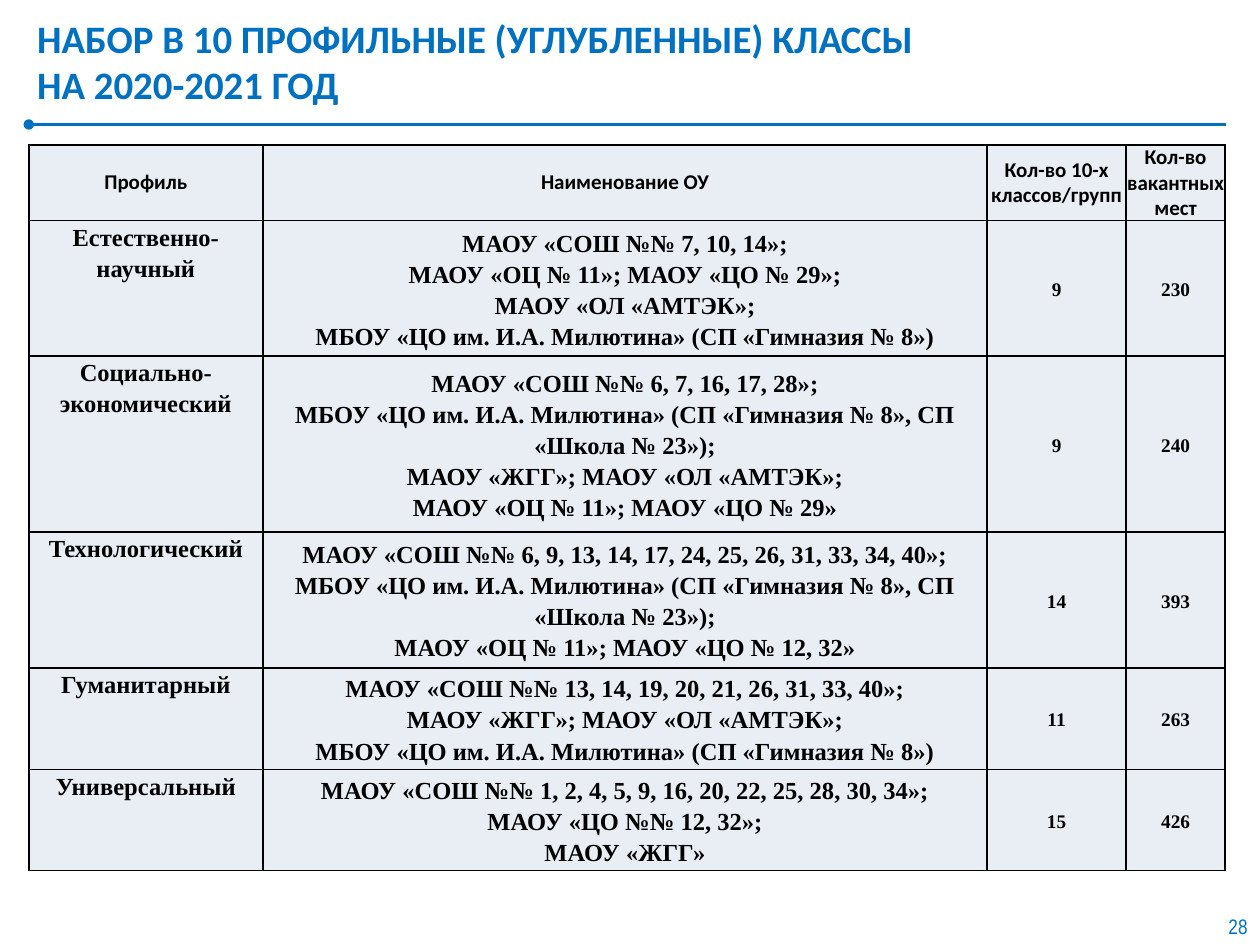
from dataclasses import dataclass

from lxml import etree
from pptx import Presentation
from pptx.dml.color import RGBColor
from pptx.enum.shapes import MSO_CONNECTOR
from pptx.enum.text import MSO_ANCHOR, PP_ALIGN
from pptx.oxml.ns import qn
from pptx.util import Cm, Pt

STRAIGHT = MSO_CONNECTOR.STRAIGHT
TOP, MIDDLE = MSO_ANCHOR.TOP, MSO_ANCHOR.MIDDLE
LEFT, CENTER, RIGHT = PP_ALIGN.LEFT, PP_ALIGN.CENTER, PP_ALIGN.RIGHT


@dataclass(frozen=True)
class TextStyle:
    font: str
    size: float
    color: str
    bold: bool = True
    align: int = CENTER
    spacing: float = 1.0


@dataclass(frozen=True)
class Theme:
    accent: str = "0070C0"
    border: str = "000000"
    cell: str = "E9EDF4"
    title: TextStyle = TextStyle("Calibri", 22.2, "0070C0", align=LEFT)
    page: TextStyle = TextStyle("Arial Narrow", 12, "0070C0", False, RIGHT)
    header: TextStyle = TextStyle("Calibri", 12, "000000")
    body: TextStyle = TextStyle("Times New Roman", 14, "000000", spacing=1.15)
    count: TextStyle = TextStyle("Times New Roman", 11, "000000", spacing=1.15)


THEME = Theme()
TITLE = "НАБОР В 10 ПРОФИЛЬНЫЕ (УГЛУБЛЕННЫЕ) КЛАССЫ\nНА 2020-2021 ГОД"
HEADERS = ["Профиль", "Наименование ОУ", "Кол-во 10-х классов/групп",
           "Кол-во вакантных мест"]
PROFILES = [
    ("Естественно-научный",
     "МАОУ «СОШ №№ 7, 10, 14»;\n"
     "МАОУ «ОЦ № 11»; МАОУ «ЦО № 29»;\n"
     "МАОУ «ОЛ «АМТЭК»;\n"
     "МБОУ «ЦО им. И.А. Милютина» (СП «Гимназия № 8»)",
     "9", "230"),
    ("Социально-экономический",
     "МАОУ «СОШ №№ 6, 7, 16, 17, 28»;\n"
     "МБОУ «ЦО им. И.А. Милютина» (СП «Гимназия № 8», СП «Школа № 23»);\n"
     "МАОУ «ЖГГ»; МАОУ «ОЛ «АМТЭК»;\n"
     "МАОУ «ОЦ № 11»; МАОУ «ЦО № 29»",
     "9", "240"),
    ("Технологический",
     "МАОУ «СОШ №№ 6, 9, 13, 14, 17, 24, 25, 26, 31, 33, 34, 40»;\n"
     "МБОУ «ЦО им. И.А. Милютина» (СП «Гимназия № 8», СП «Школа № 23»);\n"
     "МАОУ «ОЦ № 11»; МАОУ «ЦО № 12, 32»",
     "14", "393"),
    ("Гуманитарный",
     "МАОУ «СОШ №№ 13, 14, 19, 20, 21, 26, 31, 33, 40»;\n"
     "МАОУ «ЖГГ»; МАОУ «ОЛ «АМТЭК»;\n"
     "МБОУ «ЦО им. И.А. Милютина» (СП «Гимназия № 8»)",
     "11", "263"),
    ("Универсальный",
     "МАОУ «СОШ №№ 1, 2, 4, 5, 9, 16, 20, 22, 25, 28, 30, 34»;\n"
     "МАОУ «ЦО №№ 12, 32»;\n"
     "МАОУ «ЖГГ»",
     "15", "426"),
]
COLUMN_WIDTHS = [4.72, 14.6, 2.8, 2]
ROW_HEIGHTS = [1.53, 2.72, 3.55, 2.74, 2.04, 2.04]


def write_text(frame, text, style):
    frame.text = text
    frame.word_wrap = True
    for paragraph in frame.paragraphs:
        paragraph.alignment = style.align
        paragraph.line_spacing = style.spacing
        for run in paragraph.runs:
            run.font.name = style.font
            run.font.size = Pt(style.size)
            run.font.bold = style.bold
            run.font.color.rgb = RGBColor.from_string(style.color)


def add_label(slide, text, style, left, top, width, height, anchor=TOP):
    label = slide.shapes.add_textbox(Cm(left), Cm(top), Cm(width), Cm(height))
    label.text_frame.vertical_anchor = anchor
    write_text(label.text_frame, text, style)


def add_title_rule(slide, left, right, top):
    rule = slide.shapes.add_connector(STRAIGHT, Cm(left), Cm(top), Cm(right), Cm(top))
    rule.line.color.rgb = RGBColor.from_string(THEME.accent)
    rule.line.width = Pt(1.25)
    etree.SubElement(rule.line._get_or_add_ln(), qn("a:headEnd"), type="oval")
    etree.SubElement(rule._element.spPr, qn("a:effectLst"))


def add_borders(cell):
    properties = cell._tc.get_or_add_tcPr()
    for position, side in enumerate(("a:lnL", "a:lnR", "a:lnT", "a:lnB")):
        border = etree.Element(qn(side), w=str(Pt(1)))
        fill = etree.SubElement(border, qn("a:solidFill"))
        etree.SubElement(fill, qn("a:srgbClr"), val=THEME.border)
        properties.insert(position, border)


def fill_cell(cell, text, style, anchor, side_margin):
    write_text(cell.text_frame, text, style)
    cell.vertical_anchor = anchor
    cell.margin_left = cell.margin_right = Cm(side_margin)
    cell.margin_top = cell.margin_bottom = 0
    cell.fill.solid()
    cell.fill.fore_color.rgb = RGBColor.from_string(THEME.cell)
    add_borders(cell)


def add_profile_table(slide, left, top):
    table = slide.shapes.add_table(
        len(ROW_HEIGHTS), len(COLUMN_WIDTHS), Cm(left), Cm(top),
        Cm(sum(COLUMN_WIDTHS)), Cm(sum(ROW_HEIGHTS))).table
    for column, width in zip(table.columns, COLUMN_WIDTHS):
        column.width = Cm(width)
    for row, height in zip(table.rows, ROW_HEIGHTS):
        row.height = Cm(height)
    for column, header in enumerate(HEADERS):
        fill_cell(table.cell(0, column), header, THEME.header, MIDDLE, 0.02)
    body_formats = [(THEME.body, TOP, 0.18), (THEME.body, MIDDLE, 0.18),
                    (THEME.count, MIDDLE, 0), (THEME.count, MIDDLE, 0)]
    for row, profile in enumerate(PROFILES, start=1):
        for column, (text, layout) in enumerate(zip(profile, body_formats)):
            fill_cell(table.cell(row, column), text, *layout)


def main():
    deck = Presentation()
    deck.slide_width, deck.slide_height = Cm(25.4), Cm(19.05)
    slide = deck.slides.add_slide(deck.slide_layouts[6])
    add_title_rule(slide, 0.58, 24.71, 2.51)
    add_label(slide, TITLE, THEME.title, 0.5, 0.33, 22.86, 1.8, MIDDLE)
    add_label(slide, "28", THEME.page, 24.1, 18.29, 1.3, 0.76)
    add_profile_table(slide, 0.58, 2.92)
    deck.save("out.pptx")


if __name__ == "__main__":
    main()
